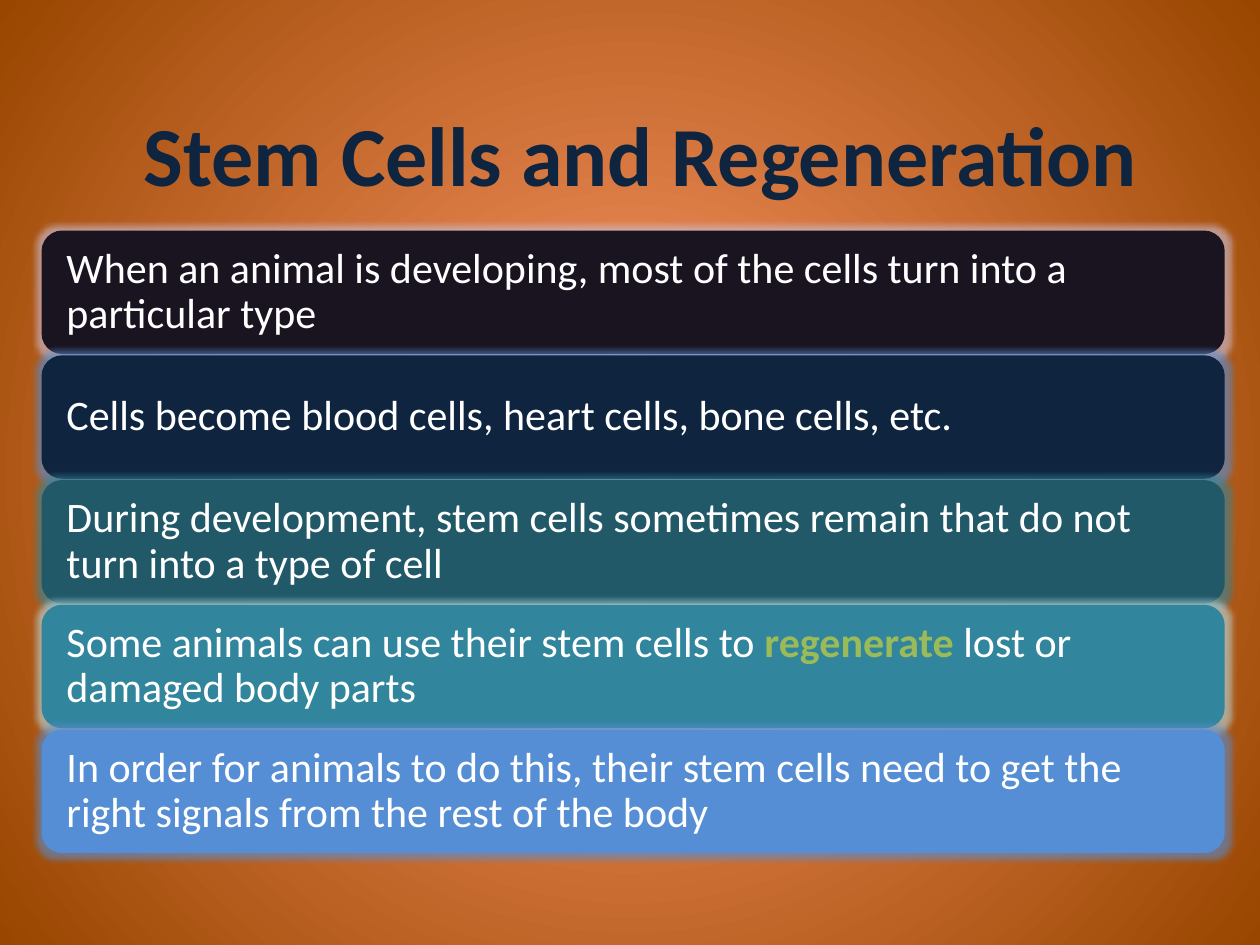
from lxml.etree import SubElement
from pptx import Presentation
from pptx.dml.color import RGBColor
from pptx.enum.shapes import MSO_SHAPE
from pptx.enum.text import MSO_ANCHOR, PP_ALIGN
from pptx.oxml.ns import qn
from pptx.util import Inches, Pt

ORANGE = RGBColor(0xFF, 0x98, 0x6A)
BROWN = RGBColor(0x98, 0x46, 0x00)
NAVY = RGBColor(0x0F, 0x24, 0x3E)
BLACK_PLUM = RGBColor(0x1A, 0x14, 0x20)
DARK_TEAL = RGBColor(0x21, 0x59, 0x68)
TEAL = RGBColor(0x31, 0x85, 0x9C)
BLUE = RGBColor(0x55, 0x8E, 0xD5)
LAVENDER = RGBColor(0xCC, 0xC1, 0xDA)
PALE_TEAL = RGBColor(0xB7, 0xDE, 0xE8)
GREEN = RGBColor(0x9B, 0xBB, 0x59)
WHITE = RGBColor(0xFF, 0xFF, 0xFF)

BODY = {"name": "Calibri", "size": Pt(24), "bold": False}
TITLE = {"name": "Calibri", "size": Pt(48), "bold": True}
KEYWORD = {**BODY, "bold": True}


def add_color(parent, color, alpha=None):
    clr = SubElement(parent, qn("a:srgbClr"), val=str(color))
    if alpha is not None:
        SubElement(clr, qn("a:alpha"), val=str(alpha * 1000))


class SlideBuilder:
    def __init__(self, prs):
        self.s = prs.slides.add_slide(prs.slide_layouts[6])

    def background(self, inner, outer):
        fill = self.s.background.fill
        fill.gradient()
        for stop, color in zip(fill.gradient_stops, (inner, outer)):
            stop.color.rgb = color
        # Turn the linear gradient into a circular one
        grad = self.s.element.find(".//" + qn("a:gradFill"))
        grad.remove(grad.find(qn("a:lin")))
        circle = SubElement(grad, qn("a:path"), path="circle")
        SubElement(circle, qn("a:fillToRect"), l="50000", t="50000", r="50000", b="50000")

    def run(self, p, text, style, color):
        r = p.add_run()
        r.text = text
        for name, value in style.items():
            setattr(r.font, name, value)
        r.font.color.rgb = color
        return r

    def title(self, text, box):
        tf = self.s.shapes.add_textbox(*map(Inches, box)).text_frame
        tf.word_wrap = True
        tf.vertical_anchor = MSO_ANCHOR.MIDDLE
        p = tf.paragraphs[0]
        p.alignment = PP_ALIGN.CENTER
        r = self.run(p, text, TITLE, NAVY)
        # Thin outline around the letters; it must precede the fill
        props = r._r.find(qn("a:rPr"))
        ln = SubElement(props, qn("a:ln"), w=str(Pt(0.75)))
        add_color(SubElement(ln, qn("a:solidFill")), TEAL)
        props.insert(0, ln)

    def bar(self, runs, box, color, glow):
        sp = self.s.shapes.add_shape(MSO_SHAPE.ROUNDED_RECTANGLE, *map(Inches, box))
        sp.fill.solid()
        sp.fill.fore_color.rgb = color
        sp.line.fill.background()
        sp.shadow.inherit = False
        effects = sp._element.spPr.find(qn("a:effectLst"))
        add_color(SubElement(effects, qn("a:glow"), rad=str(Inches(0.1))), glow, alpha=60)

        tf = sp.text_frame
        frame = {"word_wrap": True, "vertical_anchor": MSO_ANCHOR.MIDDLE}
        frame.update({f"margin_{side}": Inches(0.15) for side in ("left", "top", "right", "bottom")})
        for name, value in frame.items():
            setattr(tf, name, value)
        p = tf.paragraphs[0]
        p.alignment = PP_ALIGN.LEFT
        p.line_spacing = 0.9
        for text, style, font_color in runs:
            self.run(p, text, style, font_color)


def plain(text):
    return [(text, BODY, WHITE)]


# Bars from top to bottom: text runs, fill, glow
BARS = [
    (plain("When an animal is developing, most of the cells turn into a particular type"),
     BLACK_PLUM, LAVENDER),
    (plain("Cells become blood cells, heart cells, bone cells, etc."), NAVY, BLUE),
    (plain("During development, stem cells sometimes remain that do not turn into a type of cell"),
     DARK_TEAL, TEAL),
    (plain("Some animals can use their stem cells to ")
     + [("regenerate", KEYWORD, GREEN)]
     + plain(" lost or damaged body parts"), TEAL, PALE_TEAL),
    (plain("In order for animals to do this, their stem cells need to get the right signals "
           "from the rest of the body"), BLUE, BLUE),
]
BAR_LEFT, BAR_TOP, BAR_WIDTH, BAR_HEIGHT, BAR_PITCH = 0.33, 1.83, 9.39, 0.98, 0.99


def main():
    prs = Presentation()
    prs.slide_width, prs.slide_height = Inches(10), Inches(7.5)
    slide = SlideBuilder(prs)
    slide.background(ORANGE, BROWN)

    # Heading
    slide.title("Stem Cells and Regeneration", (-0.33, 0.83, 10.83, 0.77))

    # Stacked bars
    for i, (runs, color, glow) in enumerate(BARS):
        box = (BAR_LEFT, BAR_TOP + i * BAR_PITCH, BAR_WIDTH, BAR_HEIGHT)
        slide.bar(runs, box, color, glow)

    prs.save("out.pptx")


if __name__ == "__main__":
    main()
